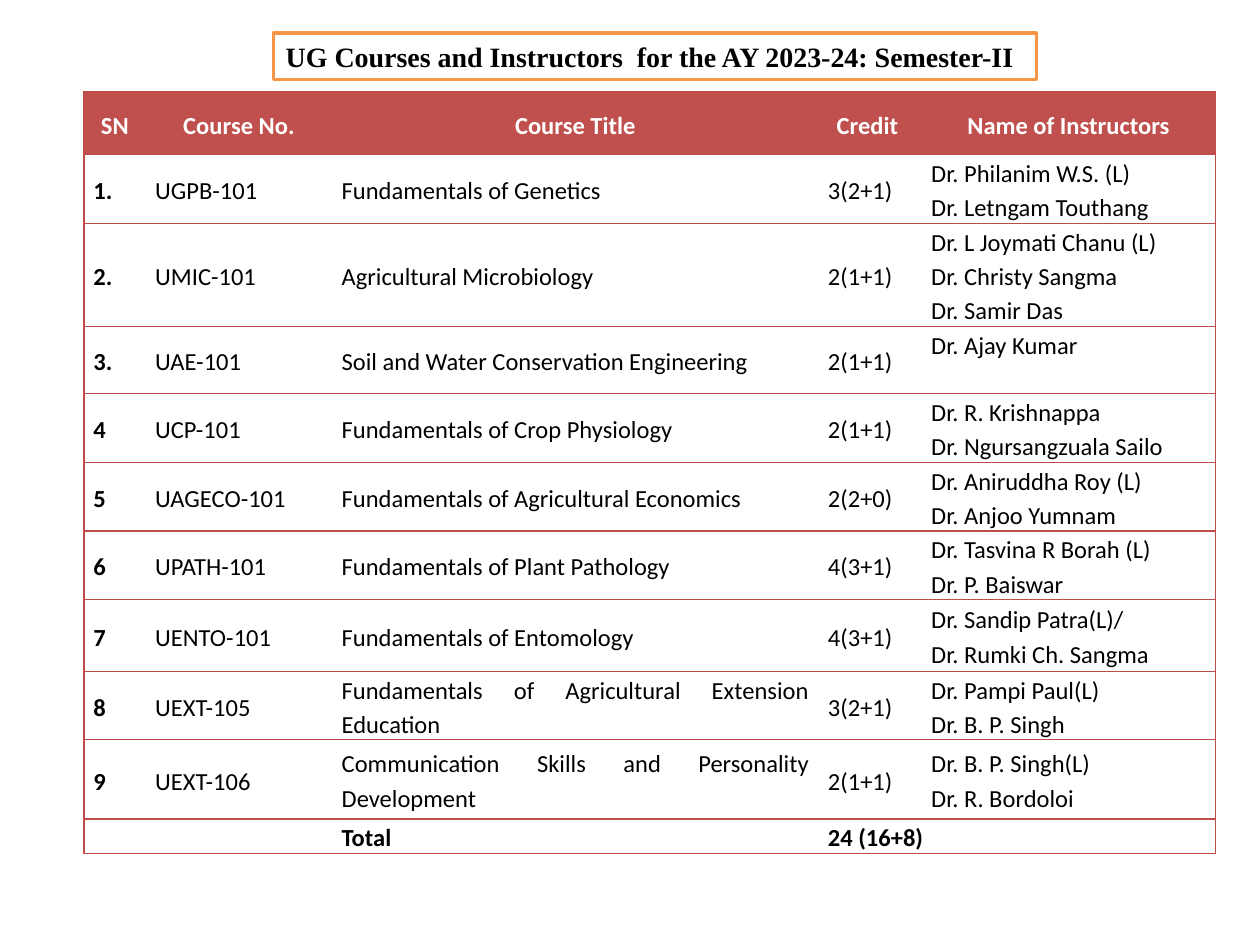
"""Build the slide listing undergraduate courses and their instructors."""
from lxml import etree
from pptx import Presentation
from pptx.dml.color import RGBColor
from pptx.enum.shapes import MSO_SHAPE
from pptx.enum.text import MSO_ANCHOR, PP_ALIGN
from pptx.oxml.ns import qn
from pptx.util import Pt

RECTANGLE = MSO_SHAPE.RECTANGLE
TOP, MIDDLE = MSO_ANCHOR.TOP, MSO_ANCHOR.MIDDLE
LEFT, CENTER, JUSTIFY = PP_ALIGN.LEFT, PP_ALIGN.CENTER, PP_ALIGN.JUSTIFY
COLORS = {"header": "C0504D", "rule": "BF4C48", "frame": "F79646",
          "white": "FFFFFF", "black": "000000"}

HEADINGS = ["SN", "Course No.", "Course Title", "Credit ", "Name of Instructors"]
COURSES = [
    ("1.", "UGPB-101", "Fundamentals of Genetics", "3(2+1)",
     "Dr. Philanim W.S. (L)", "Dr. Letngam Touthang"),
    ("2.", "UMIC-101", "Agricultural Microbiology", "2(1+1)",
     "Dr. L Joymati Chanu (L) ", "Dr. Christy Sangma", "Dr. Samir Das"),
    ("3.", "UAE-101", "Soil and Water Conservation Engineering", "2(1+1)",
     "Dr. Ajay Kumar"),
    ("4", "UCP-101", "Fundamentals of Crop Physiology", "2(1+1)",
     "Dr. R. Krishnappa", "Dr. Ngursangzuala Sailo"),
    ("5", "UAGECO-101", "Fundamentals of Agricultural Economics", "2(2+0)",
     "Dr. Aniruddha Roy (L)", "Dr. Anjoo Yumnam "),
    ("6", "UPATH-101", "Fundamentals of Plant Pathology", "4(3+1)",
     "Dr. Tasvina R Borah (L)", "Dr. P. Baiswar"),
    ("7", "UENTO-101", "Fundamentals of Entomology", "4(3+1)",
     "Dr. Sandip Patra(L)/ ", "Dr. Rumki Ch. Sangma"),
    ("8", "UEXT-105", "Fundamentals of Agricultural Extension Education", "3(2+1)",
     "Dr. Pampi Paul(L)", "Dr. B. P. Singh"),
    ("9", "UEXT-106", "Communication Skills and Personality Development", "2(1+1)",
     "Dr. B. P. Singh(L)", "Dr. R. Bordoloi"),
]
TOTALS = ["", "", "Total", "24 (16+8)", ""]
COLUMN_WIDTHS = [35.3, 106.6, 277.9, 59, 167.8]
ROW_HEIGHTS = [36, 38.5, 58.3, 38.5, 38.5, 38.5, 38.5, 41, 38.5, 45.2, 19.6]


def add_run(paragraph, text, size, font, color, bold):
    run = paragraph.add_run()
    run.text = text
    run.font.size = Pt(size)
    run.font.name = font
    run.font.bold = bold
    run.font.color.rgb = RGBColor.from_string(COLORS[color])


def set_borders(cell, visible_sides):
    properties = cell._tc.get_or_add_tcPr()
    for position, side in enumerate("LRTB"):
        line = etree.Element(qn(f"a:ln{side}"), w=str(Pt(0.75)))
        if side in visible_sides:
            fill = etree.SubElement(line, qn("a:solidFill"))
            etree.SubElement(fill, qn("a:srgbClr"), val=COLORS["rule"])
        else:
            etree.SubElement(line, qn("a:noFill"))
        properties.insert(position, line)


presentation = Presentation()
presentation.slide_width, presentation.slide_height = Pt(720), Pt(540)
slide = presentation.slides.add_slide(presentation.slide_layouts[6])

rows = [[[heading] for heading in HEADINGS]]
for number, code, name, credit, *instructors in COURSES:
    rows.append([[number], [code], [name], [credit], instructors])
rows.append([[total] for total in TOTALS])
last_row, last_column = len(rows) - 1, len(HEADINGS) - 1

courses = slide.shapes.add_table(
    len(rows), len(HEADINGS), Pt(48), Pt(52.5),
    Pt(sum(COLUMN_WIDTHS)), Pt(sum(ROW_HEIGHTS))).table
courses.horz_banding = False
for column, width in zip(courses.columns, COLUMN_WIDTHS):
    column.width = Pt(width)
for row, height in zip(courses.rows, ROW_HEIGHTS):
    row.height = Pt(height)
courses.cell(last_row, 3).merge(courses.cell(last_row, last_column))

for r, row in enumerate(rows):
    is_header = r == 0
    for c, lines in enumerate(row):
        cell = courses.cell(r, c)
        cell.margin_left = cell.margin_right = Pt(5.4)
        cell.margin_top = cell.margin_bottom = 0
        cell.vertical_anchor = TOP if lines == ["Dr. Ajay Kumar"] else MIDDLE
        if is_header:
            cell.fill.solid()
            cell.fill.fore_color.rgb = RGBColor.from_string(COLORS["header"])
        else:
            cell.fill.background()
        outer_sides = ("L" if c == 0 else "") + ("R" if c == last_column else "")
        if r == last_row and c == 3:
            outer_sides = "R"
        set_borders(cell, "TB" + outer_sides)
        for i, text in enumerate(lines):
            paragraph = cell.text_frame.add_paragraph() if i else cell.text_frame.paragraphs[0]
            paragraph.alignment = CENTER if is_header else JUSTIFY
            paragraph.line_spacing = 1.15
            if text:
                add_run(paragraph, text, 14, "Calibri", "white" if is_header else "black",
                        is_header or c == 0 or r == last_row)
            else:
                etree.SubElement(paragraph._p, qn("a:endParaRPr"), sz="1400")

title = slide.shapes.add_shape(RECTANGLE, Pt(156.2), Pt(18.9), Pt(436), Pt(26.7))
title.shadow.inherit = False
title.fill.solid()
title.fill.fore_color.rgb = RGBColor.from_string(COLORS["white"])
title.line.color.rgb = RGBColor.from_string(COLORS["frame"])
title.line.width = Pt(2)
title.text_frame.word_wrap = True
title.text_frame.vertical_anchor = MIDDLE
title_line = title.text_frame.paragraphs[0]
title_line.alignment = LEFT
add_run(title_line, "UG Courses and Instructors  for the AY 2023-24: Semester-II",
        16, "Times New Roman", "black", True)

presentation.save("out.pptx")
